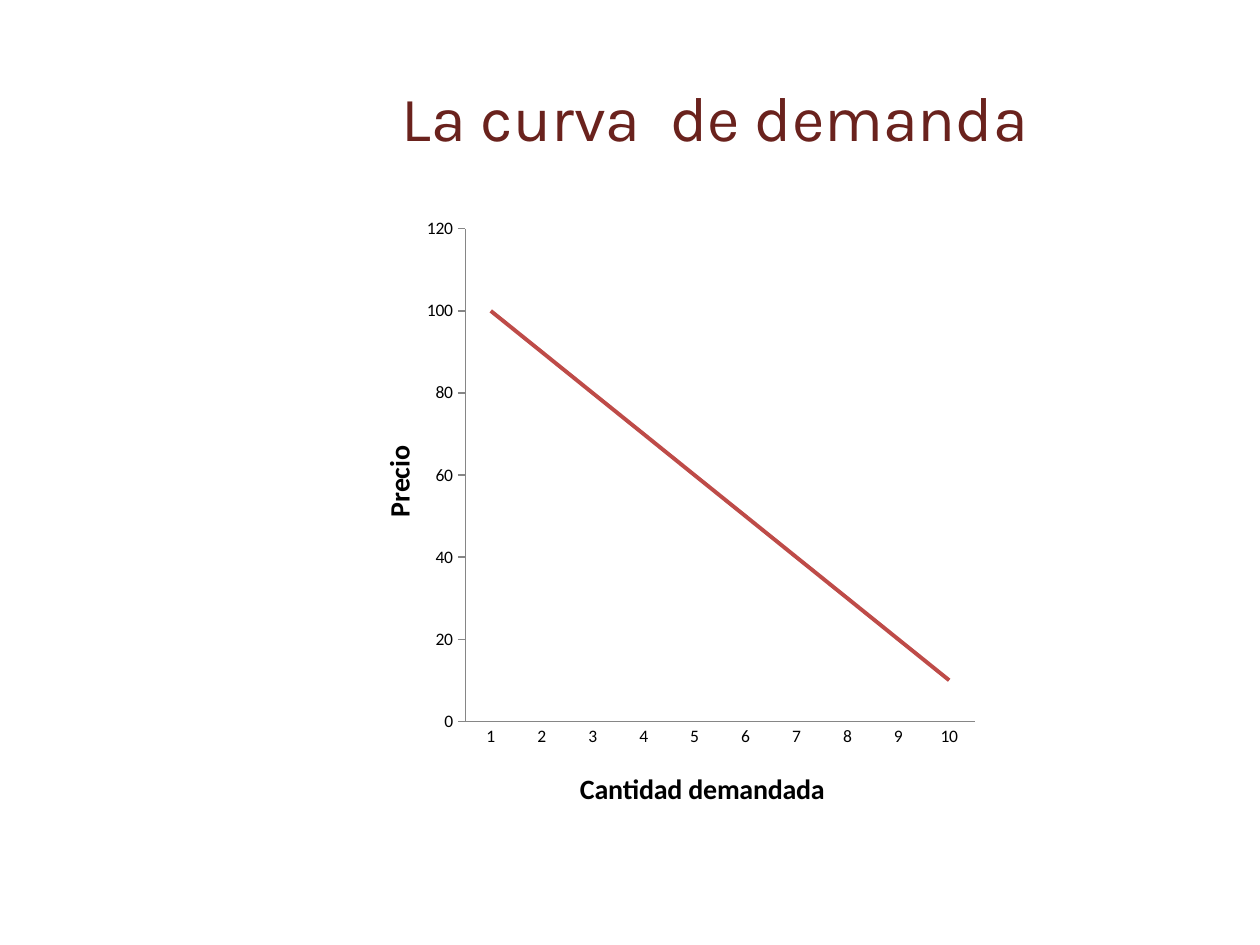
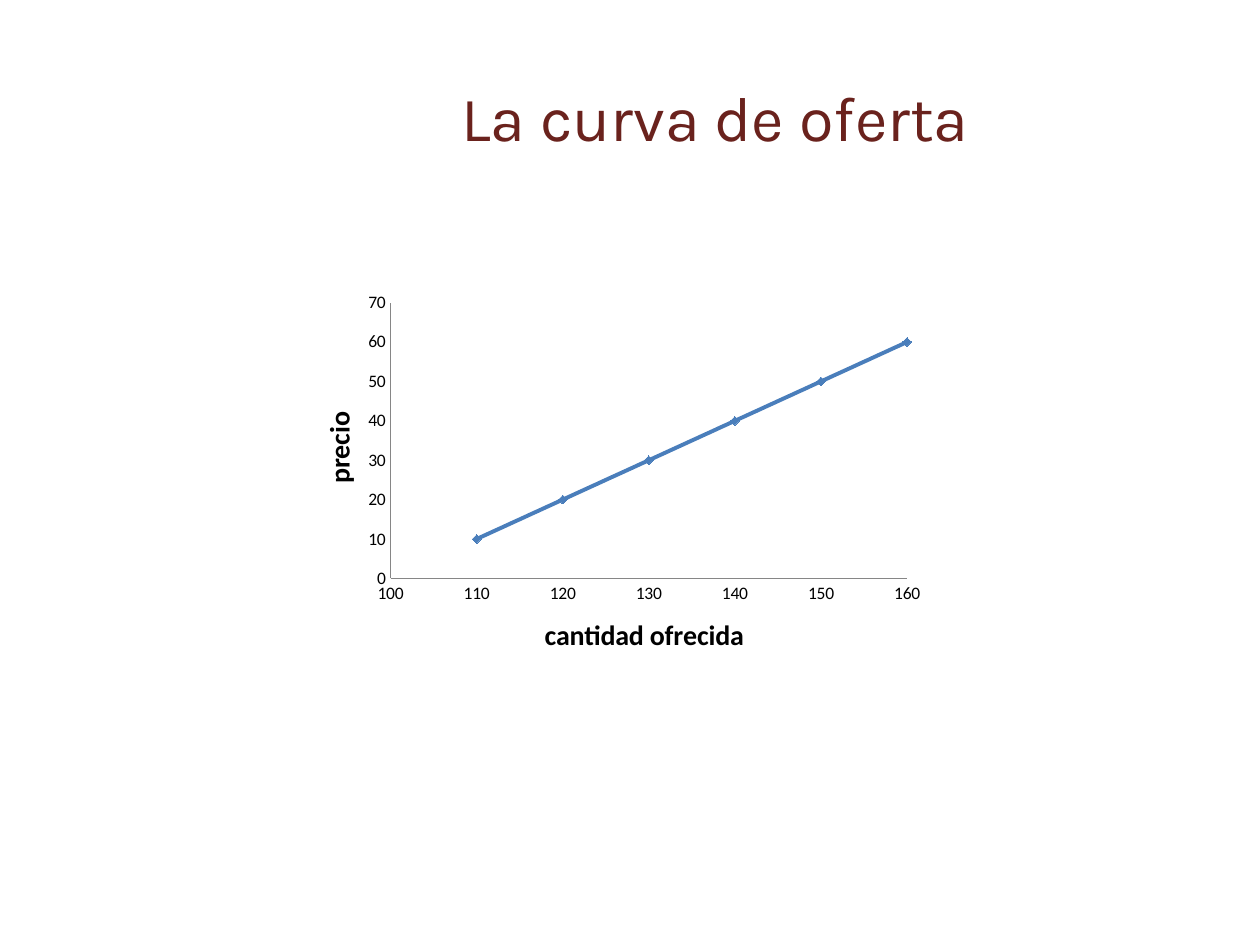
from lxml.etree import SubElement, Element
from pptx import Presentation
from pptx.chart.data import CategoryChartData, XyChartData
from pptx.dml.color import RGBColor
from pptx.enum.chart import XL_CHART_TYPE, XL_MARKER_STYLE, XL_TICK_MARK
from pptx.enum.text import MSO_ANCHOR, PP_ALIGN
from pptx.oxml.ns import qn
from pptx.util import Cm, Pt

# Content
DEMAND = {
    "title": "La curva  de demanda",
    "quantity_title": "Cantidad demandada",
    "price_title": "Precio",
    "quantities": range(1, 11),
    "prices": range(100, 0, -10),
}
SUPPLY = {
    "title": "La curva de oferta",
    "quantity_title": "cantidad ofrecida",
    "price_title": "precio",
    "quantities": range(110, 170, 10),
    "prices": range(10, 70, 10),
}

# Shared look
MAROON = RGBColor(0x6A, 0x22, 0x1D)
BLACK = RGBColor(0x00, 0x00, 0x00)
AXIS_GRAY = RGBColor(0x86, 0x86, 0x86)
DEMAND_RED = RGBColor(0xBE, 0x4B, 0x48)
SUPPLY_BLUE = RGBColor(0x4A, 0x7E, 0xBB)
TITLE_FONT = "Karla"
CHART_FONT = "Calibri"


def format_text(frame, text, size, color, font, bold=False, align=PP_ALIGN.CENTER):
    frame.text = text
    para = frame.paragraphs[0]
    para.alignment = align
    span = para.runs[0]
    span.font.size = Pt(size)
    span.font.name = font
    span.font.bold = bold
    span.font.color.rgb = color


def add_page(deck, title):
    page = deck.slides.add_slide(deck.slide_layouts[5])
    box = page.shapes.title
    box.left, box.top, box.width, box.height = Cm(4.7), Cm(0.76), Cm(19.43), Cm(3.18)
    box.text_frame.vertical_anchor = MSO_ANCHOR.MIDDLE
    format_text(box.text_frame, title, 36, MAROON, TITLE_FONT)
    return page


def place_part(part, **fractions):
    """Place a chart part by fractions of the chart's size."""
    layout = part.find(qn("c:layout"))
    if layout is None:
        layout = Element(qn("c:layout"))
        text = part.find(qn("c:tx"))
        if text is None:
            part.insert(0, layout)
        else:
            text.addnext(layout)
    manual = SubElement(layout, qn("c:manualLayout"))
    if "w" in fractions:
        SubElement(manual, qn("c:layoutTarget")).set("val", "inner")
    for name in ("x", "y"):
        SubElement(manual, qn(f"c:{name}Mode")).set("val", "edge")
    for name, value in fractions.items():
        SubElement(manual, qn(f"c:{name}")).set("val", str(value))


def format_axis(axis, title, tick):
    axis.has_major_gridlines = False
    axis.major_tick_mark = tick
    axis.minor_tick_mark = XL_TICK_MARK.NONE
    axis.format.line.color.rgb = AXIS_GRAY
    axis.format.line.width = Pt(0.75)
    format_text(axis.axis_title.text_frame, title, 16, BLACK, CHART_FONT, bold=True)


def add_curve(page, kind, data, content, area, color, price_tick, plot):
    chart = page.shapes.add_chart(kind, *area, data).chart
    chart.has_legend = False
    chart.has_title = False
    chart.font.size = Pt(10)
    chart.font.name = CHART_FONT
    chart.font.color.rgb = BLACK
    chart.plots[0].vary_by_categories = False
    format_axis(chart.category_axis, content["quantity_title"], XL_TICK_MARK.NONE)
    format_axis(chart.value_axis, content["price_title"], price_tick)
    curve = chart.plots[0].series[0]
    curve.format.line.color.rgb = color
    curve.format.line.width = Pt(2.25)
    place_part(chart.element.find(".//" + qn("c:plotArea")), **plot)
    return chart, curve


def build_demand(deck):
    page = add_page(deck, DEMAND["title"])
    data = CategoryChartData()
    data.categories = [str(quantity) for quantity in DEMAND["quantities"]]
    data.add_series("Series 1", DEMAND["prices"])
    chart, curve = add_curve(
        page, XL_CHART_TYPE.LINE_STACKED, data, DEMAND,
        area=(Cm(6.91), Cm(4.11), Cm(13), Cm(12.57)), color=DEMAND_RED,
        price_tick=XL_TICK_MARK.OUTSIDE, plot=dict(x=0.19, y=0.04, w=0.79, h=0.79))
    curve.smooth = False
    curve.marker.style = XL_MARKER_STYLE.NONE
    # Axis titles sit close to the plot
    place_part(chart.category_axis.axis_title._element, x=0.36, y=0.9)
    place_part(chart.value_axis.axis_title._element, x=0.05, y=0.38)


def build_supply(deck):
    page = add_page(deck, SUPPLY["title"])
    data = XyChartData()
    points = data.add_series("Series 1")
    for quantity, price in zip(SUPPLY["quantities"], SUPPLY["prices"]):
        points.add_data_point(quantity, price)
    chart, curve = add_curve(
        page, XL_CHART_TYPE.XY_SCATTER_SMOOTH, data, SUPPLY,
        area=(Cm(6.35), Cm(5.72), Cm(12.7), Cm(7.62)), color=SUPPLY_BLUE,
        price_tick=XL_TICK_MARK.NONE, plot=dict(x=0.12, y=0.05, w=0.82, h=0.73))
    chart.category_axis.minimum_scale = 100
    chart.category_axis.maximum_scale = 160
    chart.element.find(".//" + qn("c:smooth")).set("val", "1")
    # Diamond points in the curve's colour
    curve.marker.style = XL_MARKER_STYLE.DIAMOND
    curve.marker.size = 5
    curve.marker.format.fill.solid()
    curve.marker.format.fill.fore_color.rgb = SUPPLY_BLUE
    curve.marker.format.line.color.rgb = SUPPLY_BLUE


def main():
    deck = Presentation()
    deck.slide_width, deck.slide_height = Cm(25.4), Cm(19.05)
    build_demand(deck)
    build_supply(deck)
    deck.save("out.pptx")


if __name__ == "__main__":
    main()
